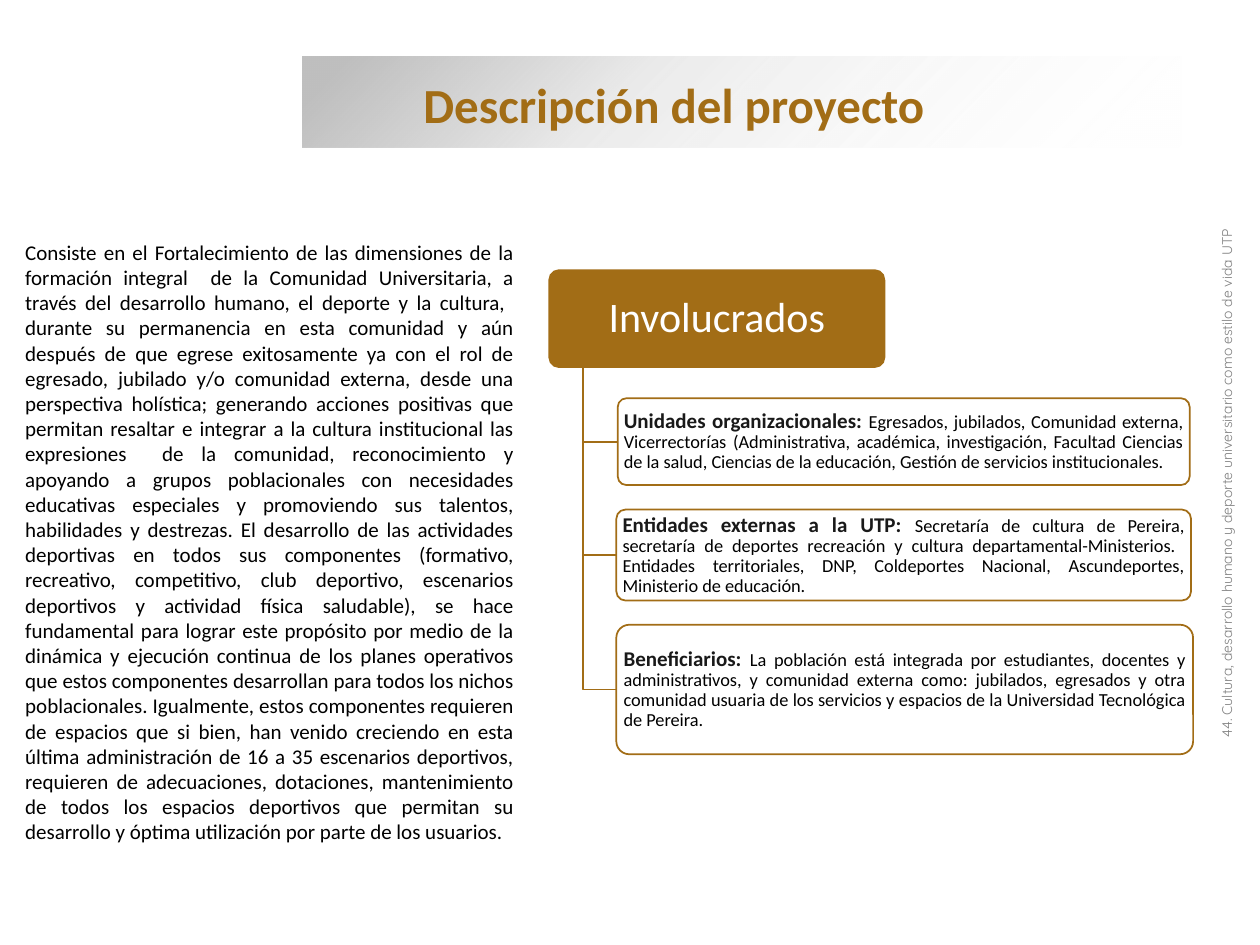
"""Build the project description slide with its stakeholder diagram."""
from lxml import etree
from pptx import Presentation
from pptx.dml.color import RGBColor
from pptx.enum import shapes, text
from pptx.oxml import ns
from pptx.util import Pt

BRONZE = RGBColor(0xA2, 0x6D, 0x16)
WHITE = RGBColor(0xFF, 0xFF, 0xFF)
BLACK = RGBColor(0, 0, 0)
INK = RGBColor(0x19, 0x19, 0x19)
GREY = RGBColor(0x80, 0x80, 0x80)
SILVER = RGBColor(0xBF, 0xBF, 0xBF)

TITLE = "Descripción del proyecto"
FOOTNOTE = "44. Cultura, desarrollo humano y deporte universitario como estilo de vida UTP"
DESCRIPTION = [
    "Consiste en el Fortalecimiento de las dimensiones de la formación integral  de la "
    "Comunidad Universitaria, a través del desarrollo humano, el deporte y la cultura,  "
    "durante su permanencia en esta comunidad y aún después de que egrese exitosamente ya "
    "con el rol de egresado, jubilado y/o comunidad externa, desde una perspectiva "
    "holística;",
    "generando acciones positivas que permitan resaltar e integrar a la cultura "
    "institucional las expresiones  de la comunidad, reconocimiento y apoyando a grupos "
    "poblacionales con necesidades educativas especiales y promoviendo sus talentos, "
    "habilidades y destrezas.",
    "El desarrollo de las actividades deportivas en todos sus "
    "componentes (formativo, recreativo, competitivo, club deportivo, escenarios deportivos "
    "y actividad física saludable), se hace fundamental para lograr este propósito por medio "
    "de la dinámica y ejecución continua de los planes operativos que estos componentes "
    "desarrollan para todos los nichos poblacionales.",
    "Igualmente, estos componentes "
    "requieren de espacios que si bien, han venido creciendo en esta última administración "
    "de 16 a 35 escenarios deportivos, requieren de adecuaciones, dotaciones, mantenimiento "
    "de todos los espacios deportivos que permitan su desarrollo y óptima utilización por "
    "parte de los usuarios.",
]
STAKEHOLDERS = [
    ((353, 227.6, 326.8, 49.6), "Unidades organizacionales: ",
     "Egresados, jubilados, Comunidad externa, Vicerrectorías (Administrativa, académica, "
     "investigación, Facultad Ciencias de la salud, Ciencias de la educación, Gestión de "
     "servicios institucionales."),
    ((352.2, 291.2, 328.4, 52), "Entidades externas a la UTP: ",
     "Secretaría de cultura de Pereira, secretaría de deportes recreación y cultura "
     "departamental-Ministerios.  Entidades territoriales, DNP, Coldeportes Nacional, "
     "Ascundeportes, Ministerio de educación."),
    ((352.2, 357, 329.6, 74), "Beneficiarios: ",
     "La población está integrada por estudiantes, docentes y administrativos, y comunidad "
     "externa como: jubilados, egresados y otra comunidad usuaria de los servicios y "
     "espacios de la Universidad Tecnológica de Pereira."),
]
TRUNK_X, TRUNK_TOP = 333.2, 209.8


def add_span(para, words, size=12, color=BLACK, bold=False, font="Calibri"):
    """Append formatted text to a paragraph."""
    span = para.add_run()
    span.text = words
    span.font.name, span.font.size, span.font.bold = font, Pt(size), bold
    span.font.color.rgb = color


class SlideBuilder:
    """Hold the diagram style and the current slide."""

    def __init__(self, page, accent=BRONZE, line_width=1):
        self.page, self.accent, self.line_width = page, accent, line_width

    def place(self, box, area):
        """Move a box to an area given in points."""
        box.left, box.top, box.width, box.height = map(Pt, area)

    def paragraph(self, box, align, anchor=text.MSO_ANCHOR.MIDDLE):
        """Prepare the text frame of a box and return its first paragraph."""
        frame = box.text_frame
        frame.word_wrap = True
        frame.auto_size = text.MSO_AUTO_SIZE.NONE
        frame.vertical_anchor = anchor
        para = frame.paragraphs[0]
        para.alignment = align
        para.space_before = Pt(0)
        return para

    def title(self, words, area):
        """Fill the title placeholder."""
        box = self.page.shapes.title
        self.place(box, area)
        para = self.paragraph(box, text.PP_ALIGN.LEFT)
        add_span(para, words, size=28, color=self.accent, bold=True)

    def body(self, words, area):
        """Fill the body placeholder with one justified, unbulleted paragraph."""
        box = self.page.placeholders[1]
        self.place(box, area)
        para = self.paragraph(box, text.PP_ALIGN.JUSTIFY, text.MSO_ANCHOR.TOP)
        props = para._p.get_or_add_pPr()
        props.set("marL", "0")
        props.set("indent", "0")
        etree.SubElement(props, ns.qn("a:buNone"))
        add_span(para, words)

    def side_note(self, words, area):
        """Add a small text box that reads upwards."""
        box = self.page.shapes.add_textbox(*map(Pt, area))
        box.rotation = 270
        para = self.paragraph(box, text.PP_ALIGN.LEFT, text.MSO_ANCHOR.TOP)
        add_span(para, words, size=8, color=GREY, font="Quicksand")

    def fading_bar(self, area, stops):
        """Add a gradient bar behind everything, with (position, colour, opacity) stops."""
        bar = self.page.shapes.add_shape(shapes.MSO_SHAPE.RECTANGLE, *map(Pt, area))
        bar.shadow.inherit = False
        bar.line.fill.background()
        bar.fill.gradient()
        bar.fill.gradient_angle = 315
        stop_list = bar._element.spPr.find(".//" + ns.qn("a:gsLst"))
        stop_list.clear()
        for position, color, opacity in stops:
            stop = etree.SubElement(stop_list, ns.qn("a:gs"), pos=str(position * 1000))
            tint = etree.SubElement(stop, ns.qn("a:srgbClr"), val=str(color))
            etree.SubElement(tint, ns.qn("a:alpha"), val=str(opacity * 1000))
        self.page.shapes._spTree.insert(2, bar._element)

    def card(self, area, fill, align, inset):
        """Add a rounded box and return its paragraph."""
        box = self.page.shapes.add_shape(shapes.MSO_SHAPE.ROUNDED_RECTANGLE, *map(Pt, area))
        box.adjustments[0] = 0.1
        box.shadow.inherit = False
        box.fill.solid()
        box.fill.fore_color.rgb = fill
        box.line.color.rgb = self.accent
        box.line.width = Pt(self.line_width)
        frame = box.text_frame
        frame.margin_left = frame.margin_right = Pt(inset)
        frame.margin_top = frame.margin_bottom = Pt(1.5)
        para = self.paragraph(box, align)
        para.line_spacing = 0.9
        return para

    def branch(self, x, top, end_x, end_y):
        """Draw an angled line down from the trunk and across to a card."""
        builder = self.page.shapes.build_freeform(Pt(x), Pt(top))
        builder.add_line_segments([(Pt(x), Pt(end_y)), (Pt(end_x), Pt(end_y))], close=False)
        line = builder.convert_to_shape()
        line.shadow.inherit = False
        line.fill.background()
        line.line.color.rgb = self.accent
        line.line.width = Pt(self.line_width)


def main():
    """Build and save the deck."""
    deck = Presentation()
    deck.slide_width, deck.slide_height = Pt(720), Pt(540)
    slide = SlideBuilder(deck.slides.add_slide(deck.slide_layouts[1]))

    slide.fading_bar((172.8, 32.4, 502.6, 51.8),
                     [(5, SILVER, 100), (37, SILVER, 31), (100, WHITE, 0)])
    slide.title(TITLE, (234.7, 38.9, 446.4, 41))
    slide.body(" ".join(DESCRIPTION), (7.2, 133.2, 293.8, 370.8))

    header = slide.card((313.9, 154.4, 191.5, 55.4), BRONZE, text.PP_ALIGN.CENTER, 3.6)
    add_span(header, "Involucrados", size=24, color=WHITE)
    for area, heading, details in STAKEHOLDERS:
        left, top, _, height = area
        slide.branch(TRUNK_X, TRUNK_TOP, left, top + height / 2)
        para = slide.card(area, WHITE, text.PP_ALIGN.JUSTIFY, 2)
        add_span(para, heading, color=INK, bold=True)
        add_span(para, details, size=10.5)

    slide.side_note(FOOTNOTE, (527, 245.5, 348.5, 17.3))
    deck.save("out.pptx")


if __name__ == "__main__":
    main()
